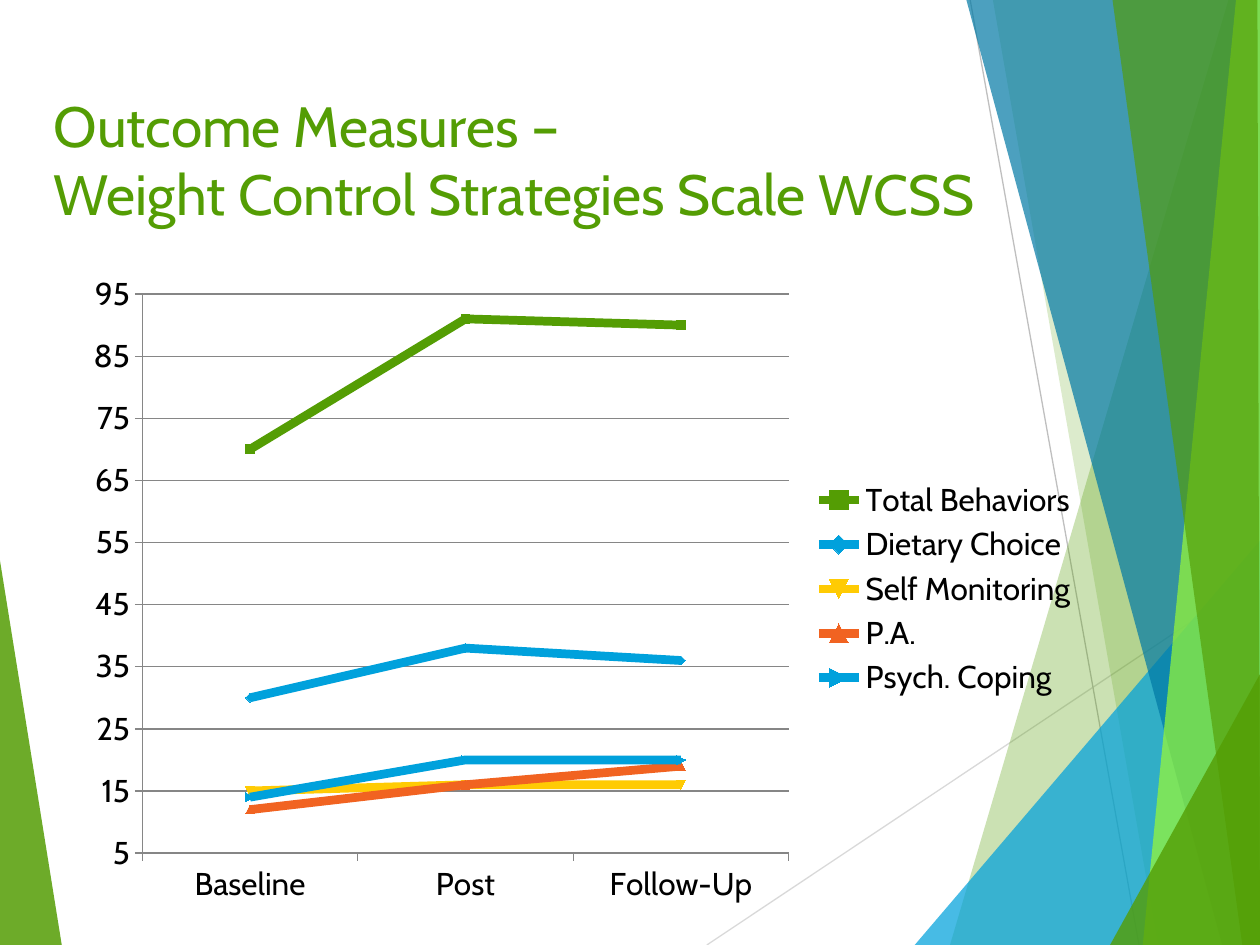
from dataclasses import dataclass

from lxml.etree import SubElement
from pptx import Presentation
from pptx.chart.data import CategoryChartData
from pptx.dml.color import RGBColor
from pptx.enum.chart import XL_CHART_TYPE, XL_LEGEND_POSITION, XL_TICK_MARK
from pptx.enum.shapes import MSO_CONNECTOR
from pptx.enum.text import MSO_ANCHOR
from pptx.oxml import parse_xml
from pptx.oxml.ns import nsdecls, qn
from pptx.util import Inches, Pt


@dataclass(frozen=True)
class Theme:
    font: str = "Cabin"
    green: str = "549D04"
    lime: str = "9BFA33"
    blue: str = "00A1DC"
    deep_blue: str = "0079A5"
    yellow: str = "FFCB04"
    orange: str = "F16321"
    black: str = "000000"
    axis: str = "868686"
    light_gray: str = "D9D9D9"
    gray: str = "BFBFBF"
    title_size: float = 32.4
    chart_size: float = 18
    hairline: float = 0.75
    series_line: float = 5
    marker_size: int = 5


THEME = Theme()

RAYS = [
    ((5.61, 7.5), (10, 4.57), THEME.light_gray),
    ((7.7, 0), (9.04, 7.5), THEME.gray),
]
FACETS = [
    ([(0, 4.45), (0.49, 7.5), (0, 7.5)], THEME.green, 85),
    ([(9.75, 0), (7.54, 7.5), (10, 7.5), (10, 0)], THEME.green, 30),
    ([(7.88, 0), (9.19, 7.5), (10, 7.5), (10, 0)], THEME.green, 20),
    ([(7.26, 7.5), (10, 4.29), (10, 7.5)], THEME.blue, 72),
    ([(7.67, 0), (9.7, 7.5), (10, 7.5), (10, 0)], THEME.deep_blue, 70),
    ([(9.81, 0), (9.07, 7.5), (10, 7.5), (10, 0)], THEME.lime, 70),
    ([(8.83, 0), (9.86, 7.5), (10, 7.5), (9.98, 0)], THEME.green, 65),
    ([(8.81, 7.5), (10, 5.35), (10, 7.5)], THEME.green, 80),
]
CATEGORIES = ["Baseline", "Post", "Follow-Up"]
SERIES = [
    ("Total Behaviors", (70, 91, 90), THEME.green),
    ("Dietary Choice", (30, 38, 36), THEME.blue),
    ("Self Monitoring", (15, 16, 16), THEME.yellow),
    ("P.A.", (12, 16, 19), THEME.orange),
    ("Psych. Coping", (14, 20, 20), THEME.blue),
]
PLOT_LAYOUT = {"x": 0.068, "y": 0.049, "w": 0.635, "h": 0.855}


def set_attributes(target, values):
    for name, value in values.items():
        setattr(target, name, value)


def style_line(line, color, width):
    line.color.rgb = RGBColor.from_string(color)
    line.width = Pt(width)


def style_font(font, size, color):
    set_attributes(font, {"name": THEME.font, "size": Pt(size), "bold": False})
    font.color.rgb = RGBColor.from_string(color)


def add_ray(slide, start, end, color):
    connector = slide.shapes.add_connector(MSO_CONNECTOR.STRAIGHT, *start, *end)
    style_line(connector.line, color, THEME.hairline)
    SubElement(connector._element.spPr, qn("a:effectLst"))


def add_facet(slide, points, color, opacity):
    builder = slide.shapes.build_freeform(*points[0])
    builder.add_line_segments(points[1:], close=True)
    shape = builder.convert_to_shape()
    shape.shadow.inherit = False
    shape.line.fill.background()
    shape.fill.solid()
    shape.fill.fore_color.rgb = RGBColor.from_string(color)
    fill_color = shape._element.spPr.find(".//" + qn("a:srgbClr"))
    SubElement(fill_color, qn("a:alpha"), val=str(opacity * 1000))


def add_backdrop(slide, left, top):
    def place(point):
        return left + Inches(point[0]), top + Inches(point[1])

    facets = [([place(point) for point in points], color, opacity)
              for points, color, opacity in FACETS]
    add_facet(slide, *facets[0])
    for start, end, color in RAYS:
        add_ray(slide, place(start), place(end), color)
    for facet in facets[1:]:
        add_facet(slide, *facet)


def add_title(slide, left, top, width, height):
    frame = slide.shapes.add_textbox(left, top, width, height).text_frame
    set_attributes(frame, {"word_wrap": True, "vertical_anchor": MSO_ANCHOR.TOP})
    paragraph = frame.paragraphs[0]
    paragraph.text = "Outcome Measures –\vWeight Control Strategies Scale WCSS"
    for run in paragraph.runs:
        style_font(run.font, THEME.title_size, THEME.green)


def set_plot_layout(chart):
    modes = '<c:layoutTarget val="inner"/><c:xMode val="edge"/><c:yMode val="edge"/>'
    sizes = "".join(f'<c:{name} val="{value}"/>' for name, value in PLOT_LAYOUT.items())
    plot_area = chart._chartSpace.chart.plotArea
    for layout in plot_area.findall(qn("c:layout")):
        plot_area.remove(layout)
    plot_area.insert(0, parse_xml(
        f'<c:layout {nsdecls("c")}><c:manualLayout>{modes}{sizes}'
        "</c:manualLayout></c:layout>"))


def style_axes(chart):
    for axis in (chart.category_axis, chart.value_axis):
        axis.major_tick_mark = XL_TICK_MARK.OUTSIDE
        style_line(axis.format.line, THEME.axis, THEME.hairline)
    set_attributes(chart.value_axis, {
        "minimum_scale": 5,
        "maximum_scale": 95,
        "major_unit": 10,
        "has_major_gridlines": True,
    })
    style_line(chart.value_axis.major_gridlines.format.line, THEME.axis, THEME.hairline)


def add_outcome_chart(slide, left, top, width, height):
    data = CategoryChartData()
    data.categories = CATEGORIES
    for name, values, color in SERIES:
        data.add_series(name, values)
    chart = slide.shapes.add_chart(
        XL_CHART_TYPE.LINE_MARKERS, left, top, width, height, data).chart
    set_attributes(chart, {"has_title": False, "has_legend": True})
    set_attributes(chart.legend, {
        "position": XL_LEGEND_POSITION.RIGHT,
        "include_in_layout": False,
    })
    style_font(chart.font, THEME.chart_size, THEME.black)
    style_axes(chart)
    set_plot_layout(chart)
    plot = chart.plots[0]
    plot.vary_by_categories = False
    for series, (name, values, color) in zip(plot.series, SERIES):
        series.smooth = False
        style_line(series.format.line, color, THEME.series_line)
        series.marker.size = THEME.marker_size
        series.marker.format.fill.solid()
        series.marker.format.fill.fore_color.rgb = RGBColor.from_string(color)
        series.marker.format.line.fill.background()


def main():
    presentation = Presentation()
    set_attributes(presentation, {"slide_width": Inches(10), "slide_height": Inches(7.5)})
    slide = presentation.slides.add_slide(presentation.slide_layouts[6])
    add_backdrop(slide, Inches(0), Inches(0))
    add_title(slide, Inches(0.33), Inches(0.67), Inches(7.83), Inches(1.44))
    add_outcome_chart(slide, Inches(0.58), Inches(2.08), Inches(8.08), Inches(5.19))
    presentation.save("out.pptx")


if __name__ == "__main__":
    main()
